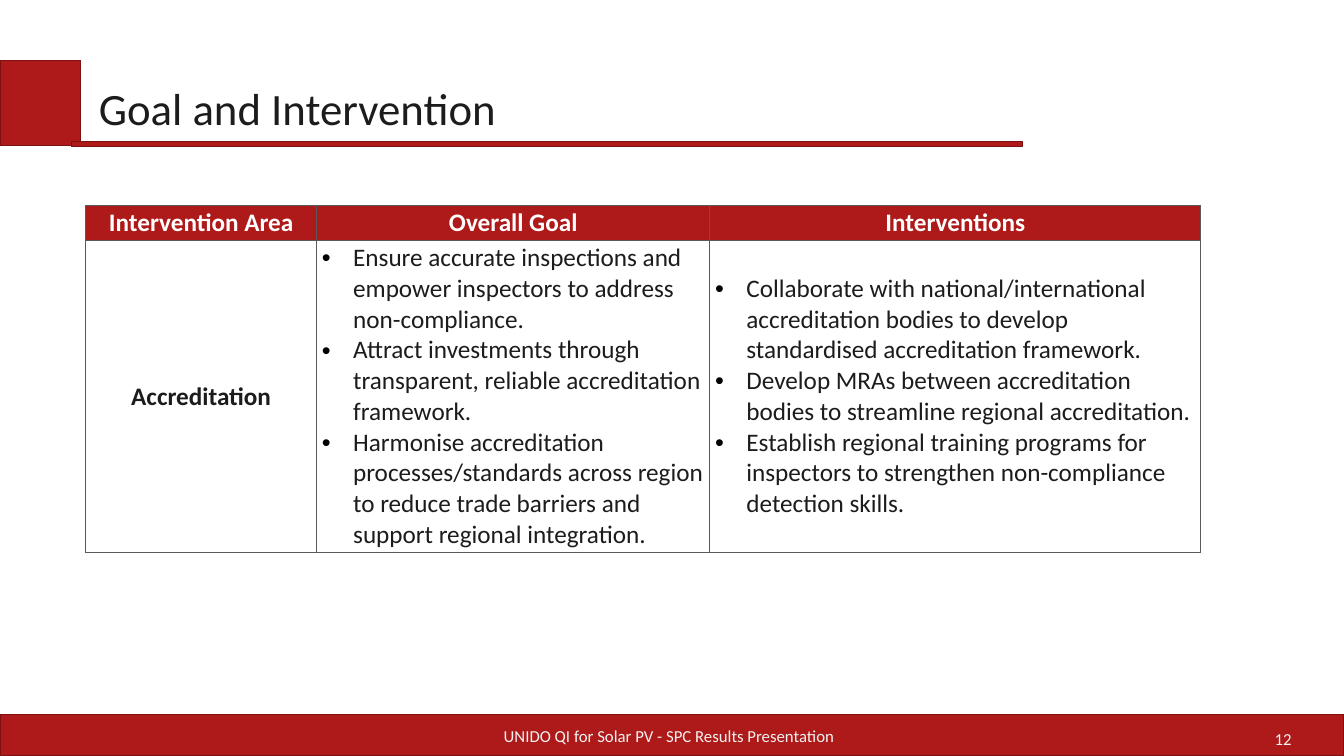
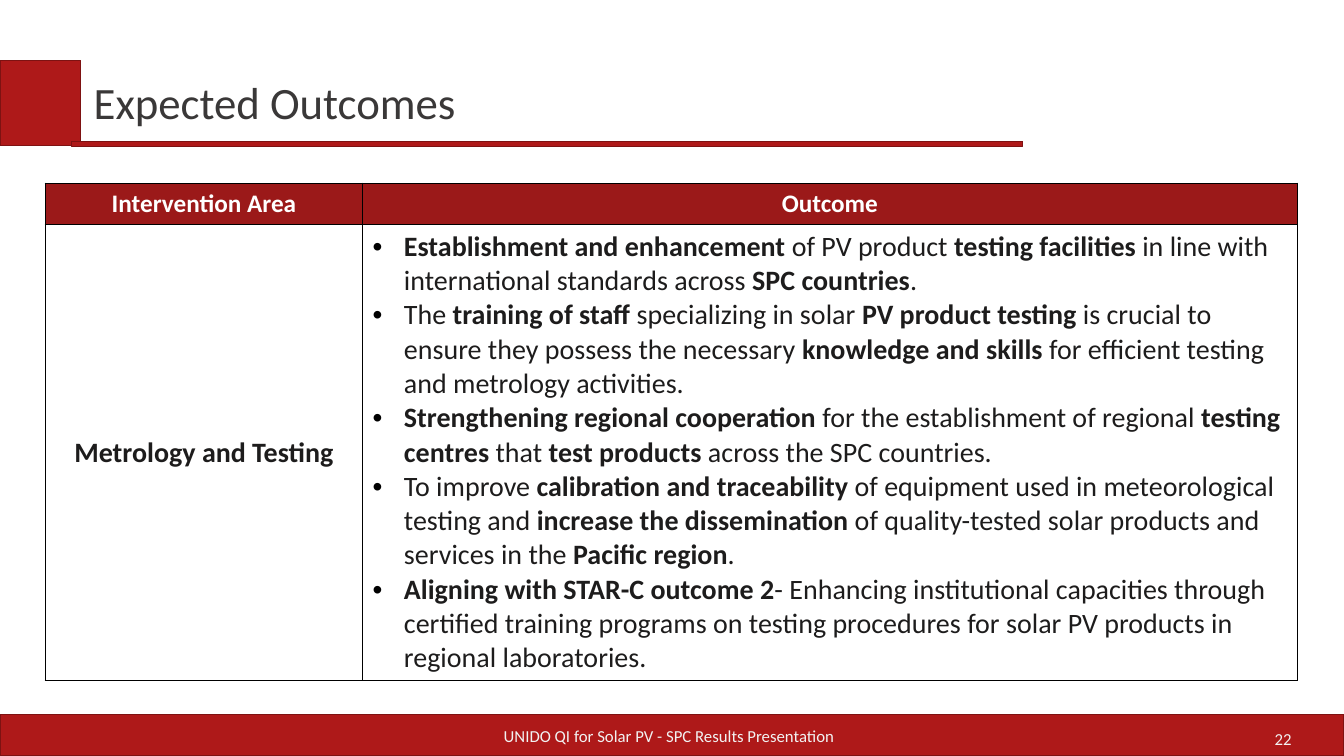
from dataclasses import dataclass

from lxml.etree import SubElement
from pptx import Presentation
from pptx.dml.color import RGBColor
from pptx.enum.shapes import MSO_SHAPE
from pptx.enum.text import MSO_ANCHOR, MSO_AUTO_SIZE, PP_ALIGN
from pptx.oxml import parse_xml
from pptx.oxml.ns import nsdecls, qn
from pptx.util import Cm, Pt

FONT = "Calibri"
COLORS = {
    "red": "AE1919",
    "dark_red": "9B1919",
    "outline": "7E1212",
    "ink": "1D1C1C",
    "slate": "3A3838",
    "grey": "595959",
    "black": "000000",
    "white": "FFFFFF",
    "pale": "F2F2F2",
}


@dataclass(frozen=True)
class Box:
    left: float
    top: float
    width: float
    height: float

    def lengths(self) -> tuple:
        return Cm(self.left), Cm(self.top), Cm(self.width), Cm(self.height)


@dataclass(frozen=True)
class TextStyle:
    size: float
    color: str
    bold: bool = False
    align: PP_ALIGN = PP_ALIGN.LEFT


@dataclass(frozen=True)
class TableStyle:
    header_fill: str
    border: str
    body_size: float
    margins: tuple[float, float]
    list_anchor: MSO_ANCHOR


@dataclass(frozen=True)
class TableSlide:
    title: str
    title_box: Box
    title_margin: float
    title_color: str
    number: int
    table_box: Box
    column_widths: tuple[float, ...]
    header_height: float
    headers: tuple[str, ...]
    area: str
    lists: tuple[tuple[str, ...], ...]
    style: TableStyle


BANDS = (
    Box(0, 18.01, 33.87, 1.02),
    Box(0, 1.52, 2.04, 2.15),
    Box(1.8, 3.56, 23.98, 0.13),
)
CAPTION = "UNIDO QI for Solar PV - SPC Results Presentation"
CAPTION_BOX = Box(9.17, 18.03, 15.39, 1.02)
NUMBER_BOX = Box(24.82, 18.11, 7.98, 1.02)

SLIDES = (
    TableSlide(
        title="Goal and Intervention",
        title_box=Box(2.16, 1.63, 21.36, 2.16),
        title_margin=0.33,
        title_color="ink",
        number=12,
        table_box=Box(2.16, 5.18, 28.1, 8.74),
        column_widths=(5.82, 9.91, 12.37),
        header_height=0.88,
        headers=("Intervention Area", "Overall Goal", "Interventions"),
        area="Accreditation",
        lists=(
            (
                "Ensure accurate inspections and empower inspectors to address non-compliance.",
                "Attract investments through transparent, reliable accreditation framework.",
                "Harmonise accreditation processes/standards across region to reduce trade "
                "barriers and support regional integration.",
            ),
            (
                "Collaborate with national/international accreditation bodies to develop "
                "standardised accreditation framework.",
                "Develop MRAs between accreditation bodies to streamline regional accreditation.",
                "Establish regional training programs for inspectors to strengthen "
                "non-compliance detection skills.",
            ),
        ),
        style=TableStyle("red", "grey", 18, (0.13, 0.05), MSO_ANCHOR.MIDDLE),
    ),
    TableSlide(
        title="Expected Outcomes",
        title_box=Box(2.11, 1.63, 21.29, 1.85),
        title_margin=0.25,
        title_color="slate",
        number=22,
        table_box=Box(1.14, 4.62, 31.55, 12.51),
        column_widths=(8, 23.55),
        header_height=1.02,
        headers=("Intervention Area", "Outcome"),
        area="Metrology and Testing",
        lists=(
            (
                "**Establishment and enhancement** of PV product **testing facilities** in line "
                "with international standards across **SPC countries**.",
                "The **training of staff** specializing in solar **PV product testing** is "
                "crucial to ensure they possess the necessary **knowledge and skills** for "
                "efficient testing and metrology activities.",
                "**Strengthening regional cooperation** for the establishment of regional "
                "**testing centres** that **test products** across the SPC countries.",
                "To improve **calibration and traceability** of equipment used in "
                "meteorological testing and **increase the dissemination** of quality-tested "
                "solar products and services in the **Pacific region**.",
                "**Aligning with STAR-C outcome 2**- Enhancing institutional capacities through "
                "certified training programs on testing procedures for solar PV products in "
                "regional laboratories.",
            ),
        ),
        style=TableStyle("dark_red", "black", 20, (0.25, 0.13), MSO_ANCHOR.TOP),
    ),
)


def rgb(name: str) -> RGBColor:
    return RGBColor.from_string(COLORS[name])


def format_paragraph(paragraph, style: TextStyle) -> None:
    paragraph.alignment = style.align
    for run in paragraph.runs:
        run.font.name = FONT
        run.font.size = Pt(style.size)
        run.font.bold = style.bold
        run.font.color.rgb = rgb(style.color)


def set_margins(target, horizontal: float, vertical: float) -> None:
    target.margin_left = target.margin_right = Cm(horizontal)
    target.margin_top = target.margin_bottom = Cm(vertical)


def fill_text(shape, text: str, style: TextStyle, horizontal: float, vertical: float) -> None:
    text_frame = shape.text_frame
    text_frame.text = text
    text_frame.word_wrap = True
    text_frame.auto_size = MSO_AUTO_SIZE.NONE
    text_frame.vertical_anchor = MSO_ANCHOR.MIDDLE
    set_margins(text_frame, horizontal, vertical)
    format_paragraph(text_frame.paragraphs[0], style)


def add_band(slide, box: Box):
    band = slide.shapes.add_shape(MSO_SHAPE.RECTANGLE, *box.lengths())
    band.shadow.inherit = False
    band.fill.solid()
    band.fill.fore_color.rgb = rgb("red")
    band.line.color.rgb = rgb("outline")
    band.line.width = Pt(0.85)
    return band


def add_footer_text(slide, box: Box, text: str, align: PP_ALIGN, vertical: float):
    shape = slide.shapes.add_textbox(*box.lengths())
    fill_text(shape, text, TextStyle(12, "pale", align=align), 0.25, vertical)
    return shape


def move_frame_to_layout(slide, layout) -> None:
    frame = [add_band(slide, box) for box in BANDS]
    frame.append(add_footer_text(slide, CAPTION_BOX, CAPTION, PP_ALIGN.CENTER, 0.25))
    for shape in frame:
        layout.shapes.element.append(shape.element)


def set_bullet(paragraph) -> None:
    properties = paragraph._p.get_or_add_pPr()
    properties.set("marL", str(Cm(0.79)))
    properties.set("indent", str(-Cm(0.79)))
    color = SubElement(properties, qn("a:buClr"))
    SubElement(color, qn("a:srgbClr")).set("val", COLORS["black"])
    SubElement(properties, qn("a:buFont")).set("typeface", "Arial")
    SubElement(properties, qn("a:buChar")).set("char", "•")


def fill_list(text_frame, items: tuple[str, ...], size: float) -> None:
    for index, item in enumerate(items):
        paragraph = text_frame.paragraphs[0] if index == 0 else text_frame.add_paragraph()
        set_bullet(paragraph)
        for position, part in enumerate(item.split("**")):
            if part:
                run = paragraph.add_run()
                run.text = part
                run.font.name = FONT
                run.font.size = Pt(size)
                run.font.bold = position % 2 == 1
                run.font.color.rgb = rgb("ink")


def set_borders(cell, color: str) -> None:
    properties = cell._tc.get_or_add_tcPr()
    for index, side in enumerate(("lnL", "lnR", "lnT", "lnB")):
        border = parse_xml(
            f'<a:{side} {nsdecls("a")} w="{Pt(1)}"><a:solidFill>'
            f'<a:srgbClr val="{COLORS[color]}"/></a:solidFill></a:{side}>'
        )
        properties.insert(index, border)


def style_cell(cell, style: TableStyle, anchor: MSO_ANCHOR, fill: str | None = None) -> None:
    set_margins(cell, *style.margins)
    cell.vertical_anchor = anchor
    if fill:
        cell.fill.solid()
        cell.fill.fore_color.rgb = rgb(fill)
    else:
        cell.fill.background()
    set_borders(cell, style.border)


def fill_label(cell, text: str, size: float, color: str) -> None:
    cell.text_frame.text = text
    label_style = TextStyle(size, color, True, PP_ALIGN.CENTER)
    format_paragraph(cell.text_frame.paragraphs[0], label_style)


def add_content_table(slide, content: TableSlide) -> None:
    style = content.style
    box = content.table_box
    table = slide.shapes.add_table(2, len(content.headers), *box.lengths()).table
    table.horz_banding = False
    for column, width in zip(table.columns, content.column_widths):
        column.width = Cm(width)
    table.rows[0].height = Cm(content.header_height)
    table.rows[1].height = Cm(box.height - content.header_height)
    for index, header in enumerate(content.headers):
        cell = table.cell(0, index)
        fill_label(cell, header, 18, "white")
        style_cell(cell, style, MSO_ANCHOR.MIDDLE, style.header_fill)
    area_cell = table.cell(1, 0)
    fill_label(area_cell, content.area, style.body_size, "ink")
    style_cell(area_cell, style, MSO_ANCHOR.MIDDLE)
    for index, items in enumerate(content.lists, start=1):
        cell = table.cell(1, index)
        fill_list(cell.text_frame, items, style.body_size)
        style_cell(cell, style, style.list_anchor)


def add_title(slide, content: TableSlide) -> None:
    title = slide.shapes.title
    title.left, title.top, title.width, title.height = content.title_box.lengths()
    margin = content.title_margin
    fill_text(title, content.title, TextStyle(32, content.title_color), margin, margin)


def main() -> None:
    presentation = Presentation()
    presentation.slide_width = Cm(33.87)
    presentation.slide_height = Cm(19.05)
    layout = presentation.slide_layouts[5]
    for index, content in enumerate(SLIDES):
        slide = presentation.slides.add_slide(layout)
        if index == 0:
            move_frame_to_layout(slide, layout)
        add_title(slide, content)
        add_content_table(slide, content)
        add_footer_text(slide, NUMBER_BOX, str(content.number), PP_ALIGN.RIGHT, 0.13)
    presentation.save("out.pptx")


if __name__ == "__main__":
    main()
